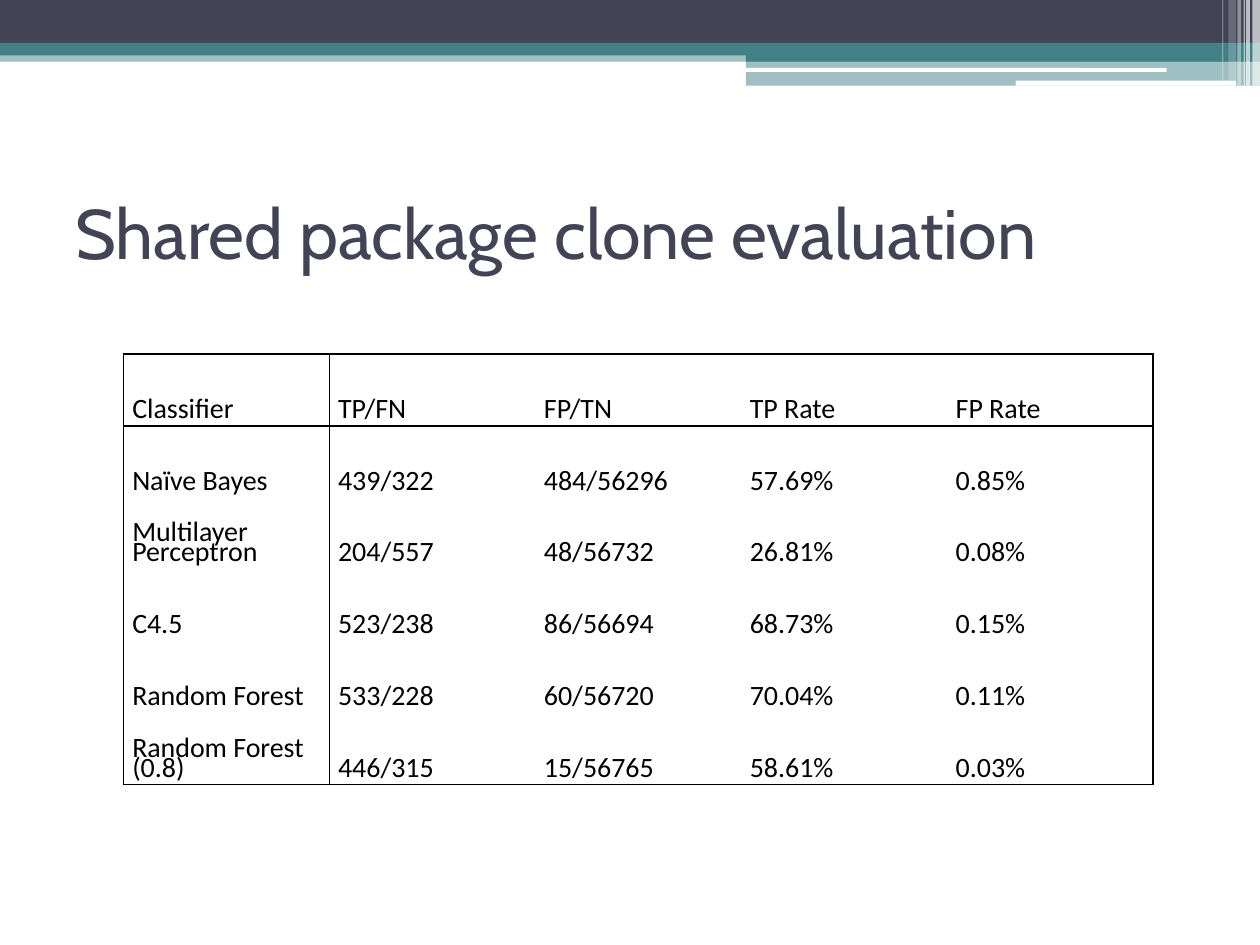
from lxml import etree
from pptx import Presentation
from pptx.dml.color import RGBColor
from pptx.enum.shapes import MSO_SHAPE
from pptx.enum.text import MSO_ANCHOR
from pptx.oxml.ns import qn
from pptx.util import Inches, Pt

RECT = MSO_SHAPE.RECTANGLE
ROUND = MSO_SHAPE.ROUNDED_RECTANGLE
MIDDLE = MSO_ANCHOR.MIDDLE
BOTTOM = MSO_ANCHOR.BOTTOM

NAVY = RGBColor(0x42, 0x44, 0x56)
TEAL = RGBColor(0x43, 0x80, 0x86)
WHITE = RGBColor(0xFF, 0xFF, 0xFF)
BLACK = RGBColor(0x00, 0x00, 0x00)

BANDS = [
    (RECT, 0, 0.4, 10, 0.09, TEAL, 50),
    (RECT, 0, 0, 10, 0.34, NAVY, 100),
    (RECT, 0, 0.34, 10, 0.1, TEAL, 100),
    (RECT, 5.92, 0.39, 4.08, 0.1, TEAL, 100),
    (RECT, 5.92, 0.48, 4.08, 0.2, TEAL, 50),
    (ROUND, 5.91, 0.54, 3.35, 0.03, WHITE, 100),
    (ROUND, 8.06, 0.64, 1.75, 0.04, WHITE, 100),
]
STRIPES = [
    (9.94, 0.06, 0.68, 65),
    (9.89, 0.03, 0.68, 65),
    (9.87, 0.01, 0.68, 60),
    (9.82, 0.03, 0.68, 40),
    (9.75, 0.06, 0.64, 20),
    (9.7, 0.01, 0.64, 30),
]
ROWS = [
    ("Classifier", "TP/FN", "FP/TN", "TP Rate", "FP Rate"),
    ("Naïve Bayes", "439/322", "484/56296", "57.69%", "0.85%"),
    ("Multilayer Perceptron", "204/557", "48/56732", "26.81%", "0.08%"),
    ("C4.5", "523/238", "86/56694", "68.73%", "0.15%"),
    ("Random Forest", "533/228", "60/56720", "70.04%", "0.11%"),
    ("Random Forest (0.8)", "446/315", "15/56765", "58.61%", "0.03%"),
]


def add_bar(slide, kind, left, top, width, height, color, opacity):
    """Add one borderless bar with the given opacity in percent."""
    sp = slide.shapes.add_shape(kind, left, top, width, height)
    sp.shadow.inherit = False
    sp.line.fill.background()
    sp.fill.solid()
    sp.fill.fore_color.rgb = color
    if opacity < 100:
        clr = sp.fill._xPr.find(qn("a:solidFill"))[0]
        etree.SubElement(clr, qn("a:alpha"), val=str(opacity * 1000))


def add_header(slide, left, top):
    """Draw the header bands and the vertical stripes at their right end."""
    stripes = [(RECT, x, 0, w, h, WHITE, a) for x, w, h, a in STRIPES]
    for kind, x, y, w, h, color, opacity in BANDS + stripes:
        add_bar(slide, kind, left + Inches(x), top + Inches(y),
                Inches(w), Inches(h), color, opacity)


def add_title(slide, left, top, width, height):
    """Add the slide title, centred vertically in its box."""
    tf = slide.shapes.add_textbox(left, top, width, height).text_frame
    tf.word_wrap = True
    tf.vertical_anchor = MIDDLE
    p = tf.paragraphs[0]
    p.text = "Shared package clone evaluation"
    p.font.name = "Cabin"
    p.font.size = Pt(40)
    p.font.color.rgb = NAVY


def set_borders(cell, sides):
    """Give the cell thin black lines on the named sides and none elsewhere."""
    tc_pr = cell._tc.get_or_add_tcPr()
    for i, side in enumerate("LRTB"):
        ln = etree.Element(qn(f"a:ln{side}"), w=str(Pt(1)))
        if side in sides:
            fill = etree.SubElement(ln, qn("a:solidFill"))
            etree.SubElement(fill, qn("a:srgbClr"), val=str(BLACK))
        else:
            etree.SubElement(ln, qn("a:noFill"))
        tc_pr.insert(i, ln)


def border_sides(row, col):
    """Return the sides ruled around the table, header row and first column."""
    last_row, last_col = len(ROWS) - 1, len(ROWS[0]) - 1
    rules = {
        "L": col <= 1,
        "R": col in (0, last_col),
        "T": row <= 1,
        "B": row in (0, last_row),
    }
    return [side for side, ruled in rules.items() if ruled]


def fill_cell(cell, text):
    """Write one bottom-aligned cell with tight line spacing."""
    cell.fill.background()
    cell.vertical_anchor = BOTTOM
    cell.margin_left = cell.margin_right = Inches(0.07)
    cell.margin_top = cell.margin_bottom = 0
    p = cell.text_frame.paragraphs[0]
    p.text = text
    p.line_spacing = Pt(11.5)
    p.font.name = "Calibri"
    p.font.size = Pt(16)
    p.font.color.rgb = BLACK


def add_results(slide, left, top, width, height):
    """Add the table of classifier results."""
    table = slide.shapes.add_table(
        len(ROWS), len(ROWS[0]), left, top, width, height).table
    table.first_row = False
    table.horz_banding = False
    for i, row in enumerate(ROWS):
        for j, text in enumerate(row):
            cell = table.cell(i, j)
            fill_cell(cell, text)
            set_borders(cell, border_sides(i, j))


def main():
    """Build the slide and save it."""
    prs = Presentation()
    prs.slide_width, prs.slide_height = Inches(10), Inches(7.5)
    slide = prs.slides.add_slide(prs.slide_layouts[6])
    add_header(slide, Inches(0), Inches(0))
    add_title(slide, Inches(0.5), Inches(1.25), Inches(9), Inches(1.17))
    add_results(slide, Inches(0.98), Inches(2.81), Inches(8.17), Inches(3.42))
    prs.save("out.pptx")


if __name__ == "__main__":
    main()
